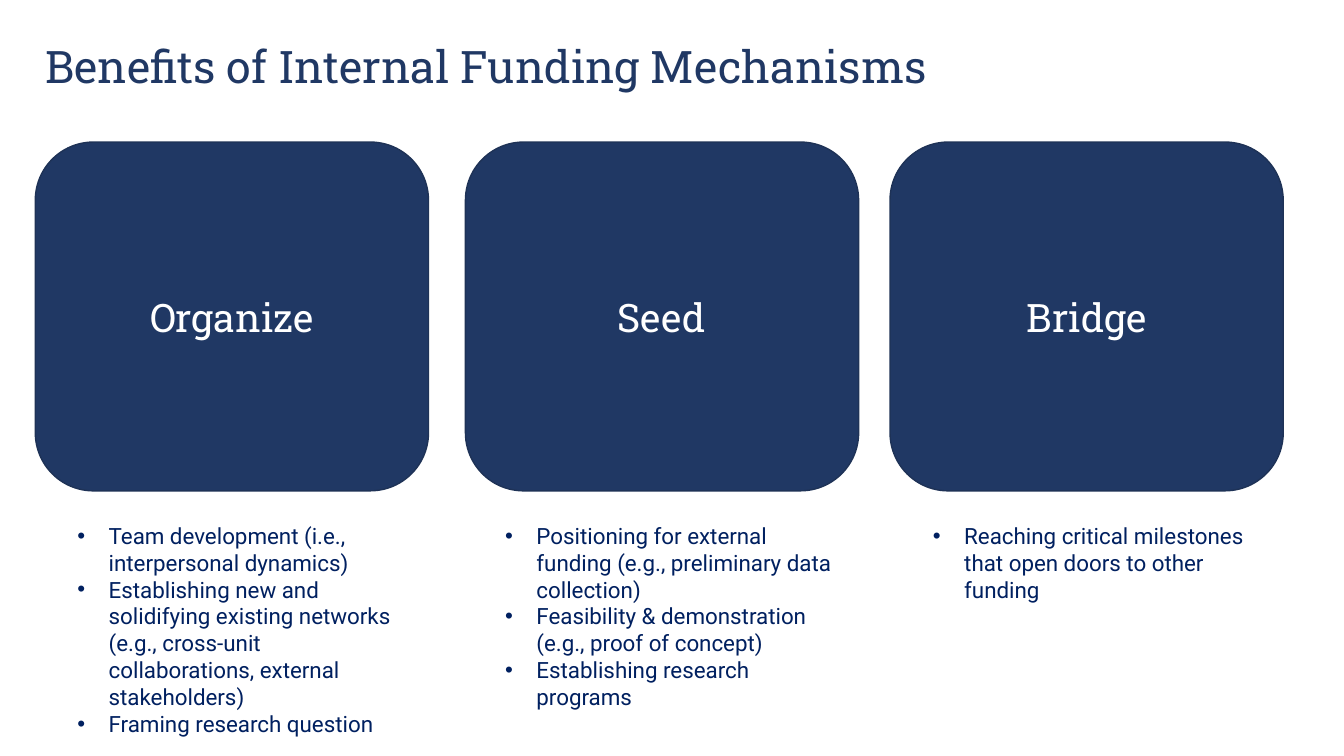
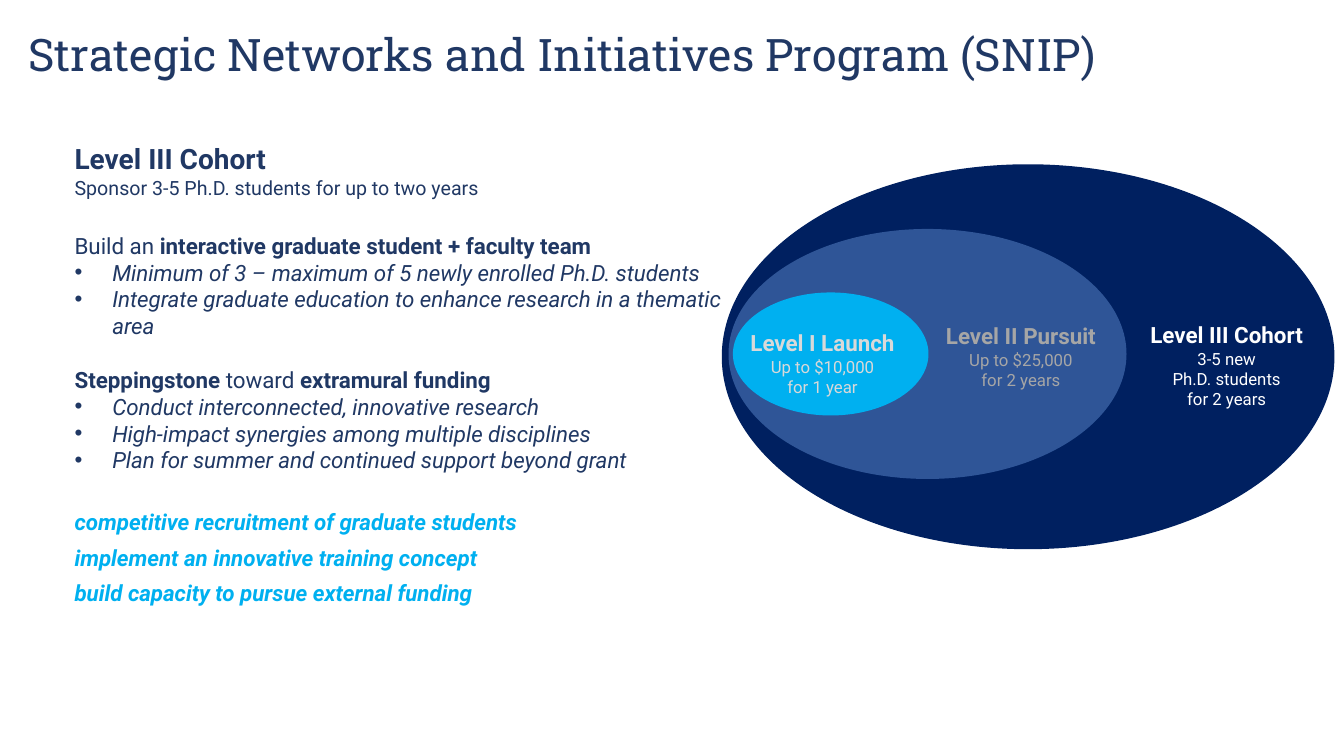
from dataclasses import dataclass

from lxml.etree import SubElement
from pptx import Presentation
from pptx.dml.color import RGBColor
from pptx.enum.shapes import MSO_SHAPE
from pptx.enum.text import MSO_ANCHOR, PP_ALIGN
from pptx.oxml.ns import qn
from pptx.util import Cm, Pt


@dataclass(frozen=True)
class Theme:
    heading_font: str = "Roboto Slab"
    body_font: str = "Roboto"
    blue: str = "203864"
    blue_edge: str = "1E3256"
    navy: str = "002060"
    mid_blue: str = "2F5597"
    cyan: str = "00B0F0"
    white: str = "FFFFFF"
    light_gray: str = "D9D9D9"
    gray: str = "A6A6A6"
    title_size: int = 32
    card_size: int = 28
    lead_size: int = 20
    body_size: int = 16
    note_size: int = 14
    small_size: int = 12


THEME = Theme()


@dataclass(frozen=True)
class Line:
    """One paragraph; spans are (text, bold) pairs that replace text when weights mix."""
    text: str = ""
    spans: tuple = ()
    size: int = THEME.body_size
    color: str = THEME.blue
    font: str = THEME.body_font
    bold: bool = False
    italic: bool = False
    centered: bool = False
    bullet_indent: float = 0
    before: float = 0


def add_bullet(para, indent):
    properties = para._p.get_or_add_pPr()
    properties.set("marL", str(Cm(indent)))
    properties.set("indent", str(-Cm(indent)))
    SubElement(properties, qn("a:buFont")).set("typeface", "Arial")
    SubElement(properties, qn("a:buChar")).set("char", "•")


def write_lines(frame, lines):
    frame.word_wrap = True
    for index, line in enumerate(lines):
        para = frame.add_paragraph() if index else frame.paragraphs[0]
        para.alignment = PP_ALIGN.CENTER if line.centered else PP_ALIGN.LEFT
        if line.before:
            para.space_before = Pt(line.before)
        if line.bullet_indent:
            add_bullet(para, line.bullet_indent)
        font = para.font
        font.name, font.size = line.font, Pt(line.size)
        font.bold, font.italic = line.bold, line.italic
        font.color.rgb = RGBColor.from_string(line.color)
        if not line.spans:
            para.add_run().text = line.text
        for text, bold in line.spans:
            span = para.add_run()
            span.text, span.font.bold = text, bold


def add_text(page, left, top, width, height, lines):
    box = page.shapes.add_textbox(Cm(left), Cm(top), Cm(width), Cm(height))
    write_lines(box.text_frame, lines)


def add_title(page, left, top, text):
    add_text(page, left, top, 29.08, 1.63,
             [Line(text, size=THEME.title_size, font=THEME.heading_font)])


def add_filled(page, kind, left, top, width, height, fill):
    shape = page.shapes.add_shape(kind, Cm(left), Cm(top), Cm(width), Cm(height))
    shape.shadow.inherit = False
    shape.fill.solid()
    shape.fill.fore_color.rgb = RGBColor.from_string(fill)
    shape.line.fill.background()
    return shape


def add_card(page, left, label):
    card = add_filled(page, MSO_SHAPE.ROUNDED_RECTANGLE, left, 3.58, 9.91, 8.79, THEME.blue)
    card.line.color.rgb = RGBColor.from_string(THEME.blue_edge)
    card.line.width = Pt(1)
    card.text_frame.vertical_anchor = MSO_ANCHOR.MIDDLE
    write_lines(card.text_frame, [Line(label, size=THEME.card_size, color=THEME.white,
                                       font=THEME.heading_font, centered=True)])


def add_level(page, left, top, width, color, name, details):
    lines = [Line(name, color=color, bold=True, centered=True)]
    lines += [Line(detail, size=THEME.small_size, color=color, centered=True)
              for detail in details]
    add_text(page, left, top, width, 1.96, lines)


def build_benefits(page):
    add_title(page, 0.89, 0.86, "Benefits of Internal Funding Mechanisms")
    benefits = [
        (0.89, "Organize", [
            "Team development (i.e., interpersonal dynamics)",
            "Establishing new and solidifying existing networks "
            "(e.g., cross-unit collaborations, external stakeholders)",
            "Framing research question"]),
        (11.73, "Seed", [
            "Positioning for external funding (e.g., preliminary data collection)",
            "Feasibility & demonstration (e.g., proof of concept)",
            "Establishing research programs"]),
        (22.43, "Bridge", [
            "Reaching critical milestones that open doors to other funding"]),
    ]
    for column, (left, label, points) in enumerate(benefits):
        add_card(page, left, label)
        add_text(page, 1.7 + column * 10.78, 13.03, 8.89, 6.4,
                 [Line(point, color=THEME.navy, bullet_indent=0.79) for point in points])


def point_lines(*points):
    return [Line(point, italic=True, bullet_indent=0.95) for point in points]


def goal_lines(*goals):
    return [Line(goal, color=THEME.cyan, bold=True, italic=True, before=6 if index else 25)
            for index, goal in enumerate(goals)]


def build_program(page):
    add_title(page, 0.46, 0.56, "Strategic Networks and Initiatives Program (SNIP)")
    add_text(page, 1.63, 3.45, 16.87, 12.09, [
        Line("Level III Cohort", size=THEME.lead_size, bold=True),
        Line("Sponsor 3-5 Ph.D. students for up to two years", size=THEME.note_size),
        Line(spans=(("Build an ", False),
                    ("interactive graduate student + faculty team", True)), before=23.5),
        *point_lines("Minimum of 3 – maximum of 5 newly enrolled Ph.D. students",
                     "Integrate graduate education to enhance research in a thematic area"),
        Line(spans=(("Steppingstone ", True), ("toward ", False),
                    ("extramural funding", True)), before=19),
        *point_lines("Conduct interconnected, innovative research",
                     "High-impact synergies among multiple disciplines",
                     "Plan for summer and continued support beyond grant"),
        *goal_lines("competitive recruitment of graduate students",
                    "implement an innovative training concept",
                    "build capacity to pursue external funding"),
    ])
    for left, top, width, height, fill in (
            (18.19, 4.14, 15.44, 9.7, THEME.navy),
            (18.36, 5.77, 10.03, 6.3, THEME.mid_blue),
            (18.47, 7.37, 4.93, 3.1, THEME.cyan)):
        add_filled(page, MSO_SHAPE.OVAL, left, top, width, height, fill)
    add_level(page, 18.47, 8.18, 4.52, THEME.light_gray, "Level I Launch",
              ["Up to $10,000", "for 1 year"])
    add_level(page, 23.47, 8, 4.52, THEME.gray, "Level II Pursuit",
              ["Up to $25,000", "for 2 years"])
    add_level(page, 28.45, 7.98, 4.93, THEME.white, "Level III Cohort",
              ["3-5 new", "Ph.D. students", "for 2 years"])


def main():
    deck = Presentation()
    deck.slide_width, deck.slide_height = Cm(33.87), Cm(19.05)
    for build in (build_benefits, build_program):
        build(deck.slides.add_slide(deck.slide_layouts[6]))
    deck.save("out.pptx")


if __name__ == "__main__":
    main()
